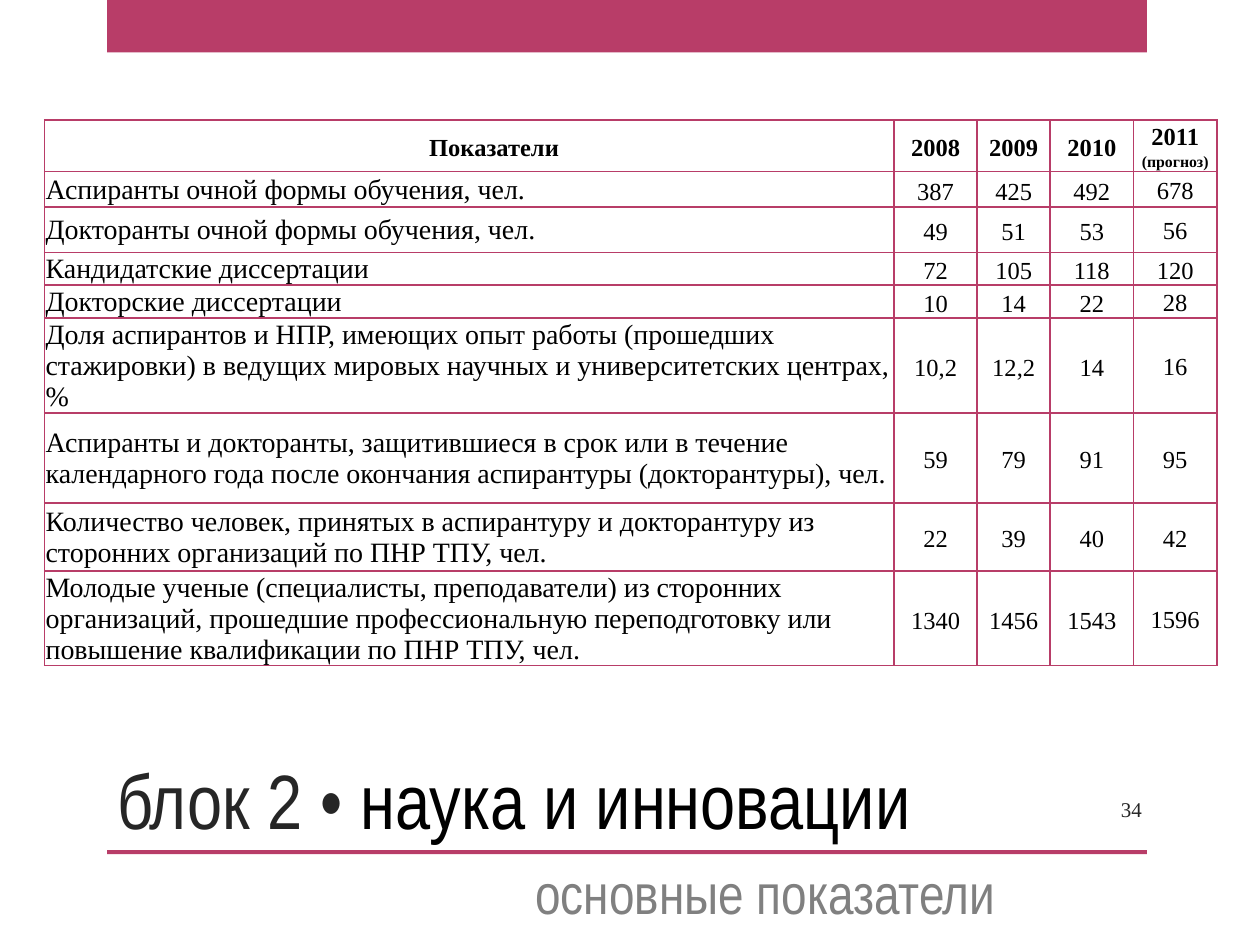
from lxml import etree
from pptx import Presentation
from pptx.dml.color import RGBColor
from pptx.enum.shapes import MSO_SHAPE as Shape
from pptx.enum.text import MSO_ANCHOR as Anchor, MSO_AUTO_SIZE as Fit, PP_ALIGN as Align
from pptx.oxml.ns import qn
from pptx.util import Cm, Pt

HUES = {"rose": "B83D68", "black": "000000", "dark": "262626", "gray": "808080"}
SERIF, NARROW = "Times New Roman", "Arial Narrow"
HEADS = ["Показатели", "2008", "2009", "2010", "2011\n(прогноз)"]
ROWS = [
    ("Аспиранты очной формы обучения, чел.", "387", "425", "492", "678"),
    ("Докторанты очной формы обучения, чел.", "49", "51", "53", "56"),
    ("Кандидатские диссертации", "72", "105", "118", "120"),
    ("Докторские диссертации", "10", "14", "22", "28"),
    ("Доля аспирантов и НПР, имеющих опыт работы (прошедших стажировки) "
     "в ведущих мировых научных и университетских центрах, %",
     "10,2", "12,2", "14", "16"),
    ("Аспиранты и докторанты, защитившиеся в срок или в течение календарного года "
     "после окончания аспирантуры (докторантуры), чел.", "59", "79", "91", "95"),
    ("Количество человек, принятых в аспирантуру и докторантуру из сторонних "
     "организаций по ПНР ТПУ, чел.", "22", "39", "40", "42"),
    ("Молодые ученые (специалисты, преподаватели) из сторонних организаций, "
     "прошедшие профессиональную переподготовку или повышение квалификации "
     "по ПНР ТПУ, чел.", "1340", "1456", "1543", "1596"),
]
WIDTHS = [17.12, 1.68, 1.47, 1.68, 1.68]
TALLS = [1.04, 0.71, 0.92, 0.66, 0.66, 1.92, 1.81, 1.37, 1.91]


def ink(run, size, face, hue, bold=False):
    font = run.font
    font.size, font.name, font.bold = Pt(size), face, bold
    font.color.rgb = RGBColor.from_string(HUES[hue])


def place(shape, left, top, width, height):
    shape.left, shape.top = Cm(left), Cm(top)
    shape.width, shape.height = Cm(width), Cm(height)


def setup(shape, anchor):
    frame = shape.text_frame
    frame.word_wrap, frame.auto_size = True, Fit.NONE
    frame.vertical_anchor = anchor
    return frame


def bar(slide, left, top, width, height):
    rect = slide.shapes.add_shape(
        Shape.RECTANGLE, Cm(left), Cm(top), Cm(width), Cm(height))
    rect.shadow.inherit = False
    rect.fill.solid()
    rect.fill.fore_color.rgb = RGBColor.from_string(HUES["rose"])
    rect.line.fill.background()


def border(cell):
    cell.fill.background()
    props = cell._tc.get_or_add_tcPr()
    for spot, side in enumerate(("lnL", "lnR", "lnT", "lnB")):
        line = etree.Element(qn("a:" + side), w=str(Pt(1)))
        fill = etree.SubElement(line, qn("a:solidFill"))
        etree.SubElement(fill, qn("a:srgbClr"), val=HUES["rose"])
        props.insert(spot, line)


def fill_cell(cell, text, row, col):
    border(cell)
    last = col == len(WIDTHS) - 1
    side = Cm(0) if last else Cm(0.02)
    cell.margin_left = cell.margin_right = cell.margin_top = side
    cell.margin_bottom = Cm(0)
    cell.vertical_anchor = Anchor.TOP if last and row == 0 else Anchor.MIDDLE
    cell.text_frame.text = text
    label = col == 0 and row > 0
    for spot, para in enumerate(cell.text_frame.paragraphs):
        para.alignment = Align.LEFT if label else Align.CENTER
        para.line_spacing = 1.0 if label else 1.15
        size = 16 if label else 9 if spot else 14
        ink(para.runs[0], size, SERIF, "black", row == 0)


def grid(slide, left, top):
    frame = slide.shapes.add_table(
        len(TALLS), len(WIDTHS), Cm(left), Cm(top), Cm(sum(WIDTHS)), Cm(sum(TALLS)))
    table = frame.table
    table.horz_banding = False
    for col, width in zip(table.columns, WIDTHS):
        col.width = Cm(width)
    for row, tall in zip(table.rows, TALLS):
        row.height = Cm(tall)
    for row, texts in enumerate([HEADS, *ROWS]):
        for col, text in enumerate(texts):
            fill_cell(table.cell(row, col), text, row, col)
    props = table.cell(0, 0).text_frame.paragraphs[0]._p.get_or_add_pPr()
    props.set("marL", str(Cm(0.5)))
    props.set("indent", str(Cm(0.5)))


def footer(slide, left, top):
    title, body = slide.shapes.title, slide.placeholders[1]
    place(title, left, top, 18.97, 2.62)
    para = setup(title, Anchor.BOTTOM).paragraphs[0]
    para.alignment = Align.LEFT
    for text, hue in (("блок 2 • ", "dark"), ("наука и инновации", "black")):
        run = para.add_run()
        run.text = text
        ink(run, 44, NARROW, hue)

    place(body, left + 5.59, top + 2.84, 15.47, 1.24)
    frame = setup(body, Anchor.MIDDLE)
    frame.text = "основные показатели"
    para = frame.paragraphs[0]
    props = para._p.get_or_add_pPr()
    props.set("marL", "0")
    props.set("indent", "0")
    etree.SubElement(props, qn("a:buNone"))
    para.alignment, para.space_before = Align.CENTER, Pt(0)
    ink(para.runs[0], 32, NARROW, "gray")

    page = slide.shapes.add_textbox(
        Cm(left + 19.05), Cm(top + 1.27), Cm(2.11), Cm(1.02))
    frame = setup(page, Anchor.MIDDLE)
    frame.text = "34"
    frame.paragraphs[0].alignment = Align.RIGHT
    ink(frame.paragraphs[0].runs[0], 12, SERIF, "dark")


def main():
    deck = Presentation()
    deck.slide_width, deck.slide_height = Cm(25.4), Cm(19.05)
    slide = deck.slides.add_slide(deck.slide_layouts[1])
    bar(slide, 2.16, 0, 20.96, 1.06)
    bar(slide, 2.16, 17.14, 20.96, 0.08)
    grid(slide, 0.9, 2.42)
    footer(slide, 2.11, 14.53)
    deck.save("out.pptx")


if __name__ == "__main__":
    main()
